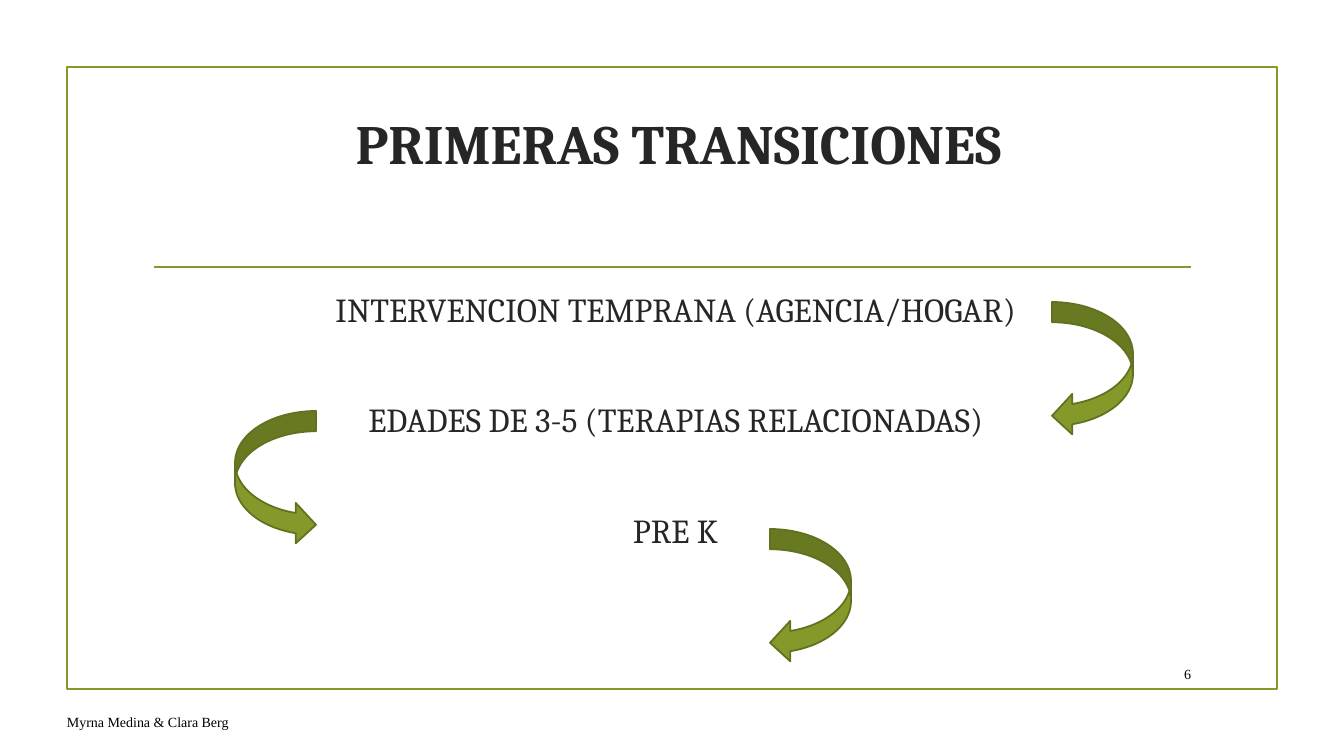
"""Build the slide about the first transitions between early services."""
from pptx import Presentation
from pptx.dml.color import RGBColor
from pptx.enum.shapes import MSO_CONNECTOR, MSO_SHAPE
from pptx.enum.text import MSO_ANCHOR, PP_ALIGN
from pptx.oxml.ns import qn
from pptx.util import Pt
from lxml import etree

TITLE = "PRIMERAS TRANSICIONES"
STAGES = [
    "INTERVENCION TEMPRANA (AGENCIA/HOGAR)",
    "EDADES DE 3-5 (TERAPIAS RELACIONADAS)",
    "PRE K",
]
AUTHORS = "Myrna Medina & Clara Berg"
PAGE = "6"
ARROWS = [
    (MSO_SHAPE.CURVED_LEFT_ARROW, 1052, 302),
    (MSO_SHAPE.CURVED_LEFT_ARROW, 770, 529),
    (MSO_SHAPE.CURVED_RIGHT_ARROW, 235, 411),
]
ARROW_SIZE = (81, 134)
COLORS = {"green": "83992A", "edge": "61711F", "ink": "262626", "black": "000000"}
LINE_WIDTH = 1.25
EMU_PER_PX = 914400 / 100.8


def px(*lengths):
    return [round(length * EMU_PER_PX) for length in lengths]


def color(name):
    return RGBColor.from_string(COLORS[name])


def add_text(slide, text, *, box, size, font="Times New Roman", ink="black", bold=False,
             align=PP_ALIGN.LEFT, anchor=MSO_ANCHOR.MIDDLE, line=None, gap=0):
    frame = slide.shapes.add_textbox(*px(*box)).text_frame
    frame.word_wrap = True
    frame.vertical_anchor = anchor
    frame.text = text
    for paragraph in frame.paragraphs:
        paragraph.alignment = align
        paragraph.space_after = Pt(gap)
        if line:
            paragraph.line_spacing = Pt(line)
        paragraph.font.name = font
        paragraph.font.size = Pt(size)
        paragraph.font.bold = bold
        paragraph.font.color.rgb = color(ink)


def add_outlined(slide, kind, box, edge, fill=None):
    shape = slide.shapes.add_shape(kind, *px(*box))
    shape.shadow.inherit = False
    if fill:
        shape.fill.solid()
        shape.fill.fore_color.rgb = color(fill)
    else:
        shape.fill.background()
    shape.line.color.rgb = color(edge)
    shape.line.width = Pt(LINE_WIDTH)


def add_rule(slide, left, right, y):
    rule = slide.shapes.add_connector(MSO_CONNECTOR.STRAIGHT, *px(left, y, right, y))
    rule.line.color.rgb = color("green")
    rule.line.width = Pt(LINE_WIDTH)
    etree.SubElement(rule._element.spPr, qn("a:effectLst"))


def main():
    presentation = Presentation()
    presentation.slide_width, presentation.slide_height = px(1344, 756)
    slide = presentation.slides.add_slide(presentation.slide_layouts[6])

    add_outlined(slide, MSO_SHAPE.RECTANGLE, (67, 67, 1210, 622), "green")
    add_rule(slide, 154, 1191, 267)
    add_text(slide, TITLE, box=(99, 102, 1159, 80), size=39.6, font="Cambria",
             ink="ink", bold=True, align=PP_ALIGN.CENTER)
    add_text(slide, "\n".join(STAGES), box=(96, 279, 1159, 409), size=24, font="Cambria",
             ink="ink", align=PP_ALIGN.CENTER, anchor=MSO_ANCHOR.TOP, line=32, gap=47)
    add_text(slide, AUTHORS, box=(57, 706, 805, 31), size=10)
    add_text(slide, PAGE, box=(1141, 658, 60, 31), size=10, align=PP_ALIGN.RIGHT)
    for kind, left, top in ARROWS:
        add_outlined(slide, kind, (left, top, *ARROW_SIZE), "edge", "green")

    presentation.save("out.pptx")


if __name__ == "__main__":
    main()
